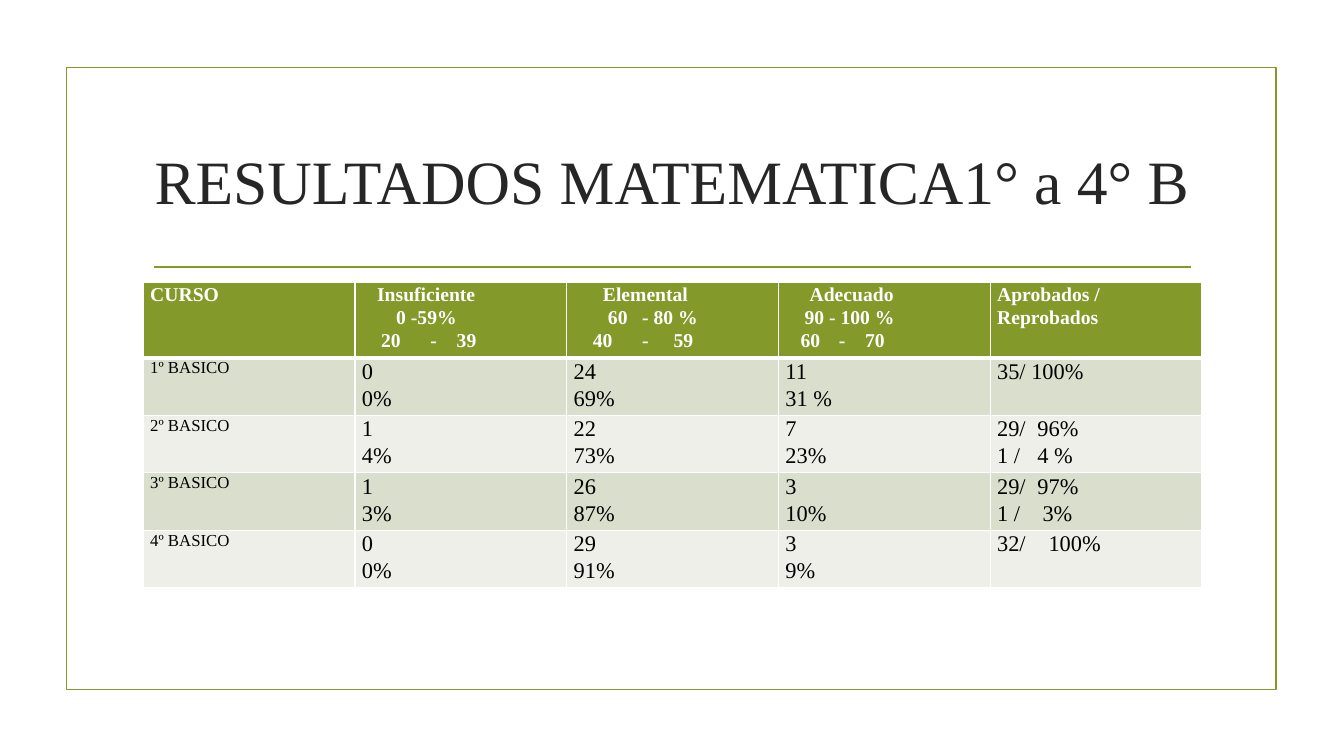
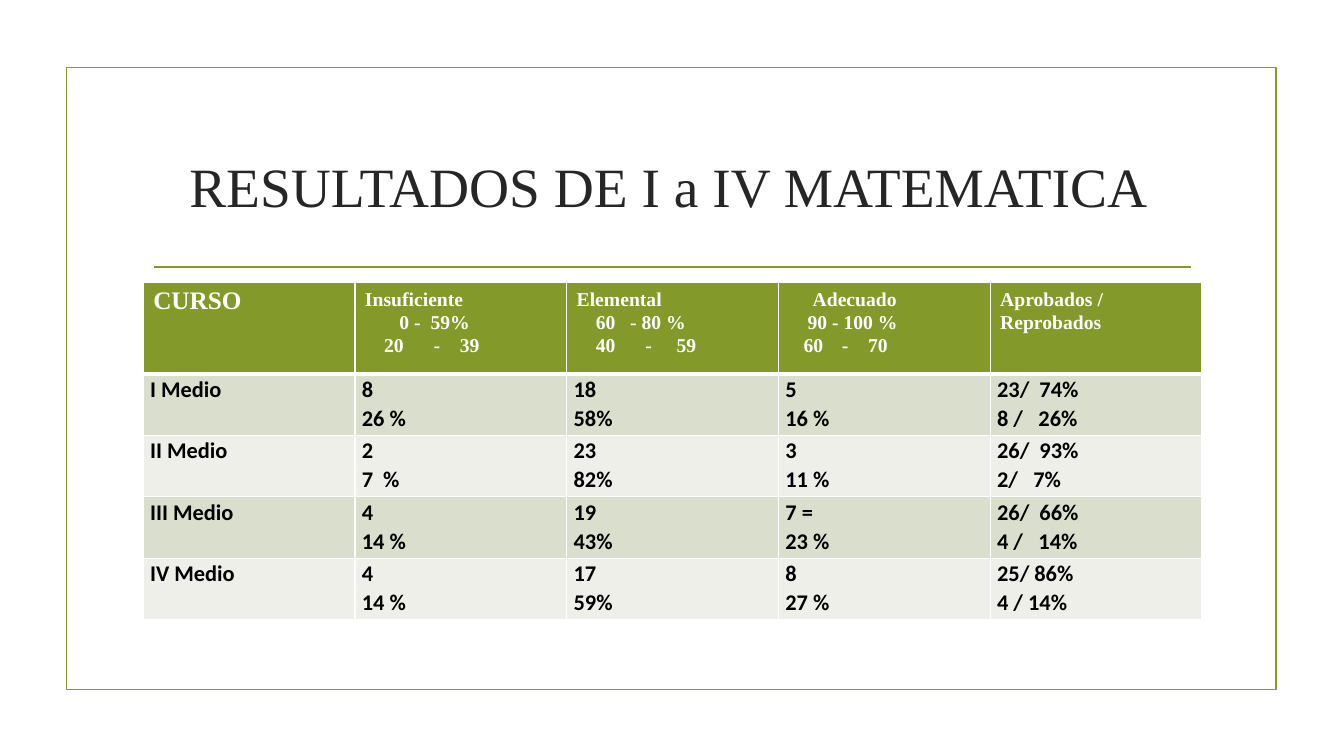
from dataclasses import dataclass

from lxml import etree
from pptx import Presentation
from pptx.dml.color import RGBColor
from pptx.enum.shapes import MSO_CONNECTOR, MSO_SHAPE
from pptx.enum.text import MSO_ANCHOR, PP_ALIGN
from pptx.oxml.ns import qn
from pptx.util import Inches, Pt

STRAIGHT = MSO_CONNECTOR.STRAIGHT
RECTANGLE = MSO_SHAPE.RECTANGLE
MIDDLE = MSO_ANCHOR.MIDDLE
CENTER = PP_ALIGN.CENTER
JUSTIFY = PP_ALIGN.JUSTIFY
LEFT = PP_ALIGN.LEFT


@dataclass(frozen=True)
class Theme:
    green: str = "83992A"
    title: str = "262626"
    white: str = "FFFFFF"
    black: str = "000000"
    bands: tuple = ("D9DECD", "EDEFE8")
    serif: str = "Times New Roman"
    sans: str = "Calibri"
    header_size: float = 14
    body_size: float = 16
    outline: float = 1.25
    cell_line: float = 1
    header_line: float = 3
    line_spacing: float = 1.07


@dataclass(frozen=True)
class TextStyle:
    size: float
    color: str
    font: str = "Times New Roman"
    bold: bool = False
    align: int = LEFT
    spacing: float = 1.07


@dataclass(frozen=True)
class Tabbed:
    text: str
    stops: tuple


@dataclass(frozen=True)
class TableLayout:
    header_height: float
    row_height: float
    header_margins: tuple
    corner: TextStyle
    course: TextStyle
    body: TextStyle


THEME = Theme()
TIGHT = (0.07, 0)
ROOMY = (0.1, 0.05)
TABLE_LEFT, TABLE_TOP, COLUMN_WIDTH = 1.42, 2.8, 2.1
HEADER = TextStyle(THEME.header_size, THEME.white, bold=True)
SERIF_BODY = TextStyle(THEME.body_size, THEME.black, align=JUSTIFY)
SANS_BODY = TextStyle(THEME.body_size, THEME.black, THEME.sans, True, JUSTIFY)

BASIC_LAYOUT = TableLayout(
    0.68, 0.53, TIGHT, HEADER,
    TextStyle(12, THEME.black, align=JUSTIFY), SERIF_BODY)
MIDDLE_SCHOOL_LAYOUT = TableLayout(
    0.91, 0.61, ROOMY,
    TextStyle(18, THEME.white, bold=True, spacing=1), SANS_BODY, SANS_BODY)

INSUFFICIENT_POINTS = Tabbed("\t20\t-\t39", (0.19, 0.68, 0.94))
ELEMENTARY_POINTS = Tabbed("\t40\t-\t59", (0.19, 0.68, 0.99))
ADEQUATE = [
    Tabbed("\tAdecuado", (0.24,)),
    Tabbed("\t90 - 100 %", (0.19,)),
    Tabbed("\t60\t-\t70", (0.15, 0.53, 0.79)),
]
PASSED = ["Aprobados /", "Reprobados"]

BASIC_ROWS = [
    [["CURSO"],
     [Tabbed("\tInsuficiente", (0.15,)), Tabbed("\t0 -59%", (0.34,)), INSUFFICIENT_POINTS],
     [Tabbed("\tElemental", (0.29,)), Tabbed("\t60\t- 80 %", (0.34, 0.68)), ELEMENTARY_POINTS],
     ADEQUATE, PASSED],
    [["1º BASICO"], ["0", "0%"], ["24", "69%"], ["11", "31 %"], ["35/ 100%"]],
    [["2º BASICO"], ["1", "4%"], ["22", "73%"], ["7", "23%"],
     [Tabbed("29/\t96%", (0.4,)), Tabbed("1 /\t4 %", (0.4,))]],
    [["3º BASICO"], ["1", "3%"], ["26", "87%"], ["3", "10%"],
     [Tabbed("29/\t97%", (0.4,)), Tabbed("1 /\t3%", (0.45,))]],
    [["4º BASICO"], ["0", "0%"], ["29", "91%"], ["3", "9%"],
     [Tabbed("32/\t100%", (0.51,))]],
]

MIDDLE_SCHOOL_ROWS = [
    [["CURSO"],
     ["Insuficiente", Tabbed("\t0 -\t59%", (0.34, 0.65)), INSUFFICIENT_POINTS],
     ["Elemental", Tabbed("\t60\t- 80 %", (0.19, 0.53)), ELEMENTARY_POINTS],
     ADEQUATE, PASSED],
    [["I Medio"], ["8", "26 %"], ["18", "58%"], ["5", "16 %"],
     [Tabbed("23/\t74%", (0.42,)), Tabbed("8 /\t26%", (0.41,))]],
    [["II Medio"], ["2", Tabbed("7\t%", (0.21,))], ["23", "82%"], ["3", "11 %"],
     [Tabbed("26/\t93%", (0.42,)), Tabbed("2/\t7%", (0.36,))]],
    [["III Medio"], ["4", "14 %"], ["19", "43%"], ["7 =", "23 %"],
     [Tabbed("26/\t66%", (0.42,)), Tabbed("4 /\t14%", (0.41,))]],
    [["IV Medio"], ["4", "14 %"], ["17", "59%"], ["8", "27 %"],
     ["25/ 86%", "4 / 14%"]],
]


def rgb(color):
    return RGBColor.from_string(color)


def add_tab_stops(paragraph, stops):
    properties = paragraph._p.get_or_add_pPr()
    tab_list = etree.SubElement(properties, qn("a:tabLst"))
    for stop in stops:
        etree.SubElement(tab_list, qn("a:tab"), pos=str(Inches(stop)), algn="l")


def write_lines(text_frame, lines, style):
    for index, line in enumerate(lines):
        paragraph = text_frame.add_paragraph() if index else text_frame.paragraphs[0]
        if isinstance(line, Tabbed):
            add_tab_stops(paragraph, line.stops)
            paragraph.text = line.text
        else:
            paragraph.text = line
        paragraph.alignment = style.align
        paragraph.line_spacing = style.spacing
        font = paragraph.font
        font.name, font.size, font.bold = style.font, Pt(style.size), style.bold
        font.color.rgb = rgb(style.color)


def add_frame(slide):
    frame = slide.shapes.add_shape(
        RECTANGLE, Inches(0.66), Inches(0.67), Inches(12), Inches(6.17))
    frame.shadow.inherit = False
    frame.fill.background()
    rule = slide.shapes.add_connector(
        STRAIGHT, Inches(1.53), Inches(2.65), Inches(11.81), Inches(2.65))
    etree.SubElement(rule._element.spPr, qn("a:effectLst"))
    for shape in (frame, rule):
        shape.line.color.rgb = rgb(THEME.green)
        shape.line.width = Pt(THEME.outline)


def add_title(slide, text, left, top, size):
    box = slide.shapes.add_textbox(
        Inches(left), Inches(top), Inches(10.5), Inches(1.43))
    box.text_frame.word_wrap = True
    box.text_frame.vertical_anchor = MIDDLE
    write_lines(box.text_frame, [text],
                TextStyle(size, THEME.title, align=CENTER, spacing=1))


def set_borders(cell, top, bottom):
    properties = cell._tc.get_or_add_tcPr()
    widths = {"a:lnL": THEME.cell_line, "a:lnR": THEME.cell_line,
              "a:lnT": top, "a:lnB": bottom}
    for index, (tag, width) in enumerate(widths.items()):
        border = etree.Element(qn(tag), w=str(Pt(width)))
        fill = etree.SubElement(border, qn("a:solidFill"))
        etree.SubElement(fill, qn("a:srgbClr"), val=THEME.white)
        properties.insert(index, border)


def format_cell(cell, lines, style, color, margins):
    cell.margin_left = cell.margin_right = Inches(margins[0])
    cell.margin_top = cell.margin_bottom = Inches(margins[1])
    cell.fill.solid()
    cell.fill.fore_color.rgb = rgb(color)
    write_lines(cell.text_frame, lines, style)


def add_results_table(slide, rows, layout):
    heights = [layout.header_height] + [layout.row_height] * (len(rows) - 1)
    columns = len(rows[0])
    table = slide.shapes.add_table(
        len(rows), columns, Inches(TABLE_LEFT), Inches(TABLE_TOP),
        Inches(COLUMN_WIDTH * columns), Inches(sum(heights))).table
    table.horz_banding = False
    for column in table.columns:
        column.width = Inches(COLUMN_WIDTH)
    for row_index, row in enumerate(rows):
        is_header = row_index == 0
        table.rows[row_index].height = Inches(heights[row_index])
        color = THEME.green if is_header else THEME.bands[(row_index - 1) % 2]
        margins = layout.header_margins if is_header else TIGHT
        first, other = ((layout.corner, HEADER) if is_header
                        else (layout.course, layout.body))
        top = THEME.header_line if row_index == 1 else THEME.cell_line
        bottom = THEME.header_line if is_header else THEME.cell_line
        for column_index, lines in enumerate(row):
            cell = table.cell(row_index, column_index)
            style = other if column_index else first
            format_cell(cell, lines, style, color, margins)
            set_borders(cell, top, bottom)


def add_results_slide(presentation, title, rows, layout):
    slide = presentation.slides.add_slide(presentation.slide_layouts[6])
    add_frame(slide)
    add_title(slide, *title)
    add_results_table(slide, rows, layout)


def main():
    presentation = Presentation()
    presentation.slide_width = Inches(13.33)
    presentation.slide_height = Inches(7.5)
    add_results_slide(
        presentation, ("RESULTADOS MATEMATICA1° a 4° B", 1.42, 1.07, 44),
        BASIC_ROWS, BASIC_LAYOUT)
    add_results_slide(
        presentation, ("RESULTADOS DE I a IV MATEMATICA", 1.38, 1.12, 39.6),
        MIDDLE_SCHOOL_ROWS, MIDDLE_SCHOOL_LAYOUT)
    presentation.save("out.pptx")


if __name__ == "__main__":
    main()
